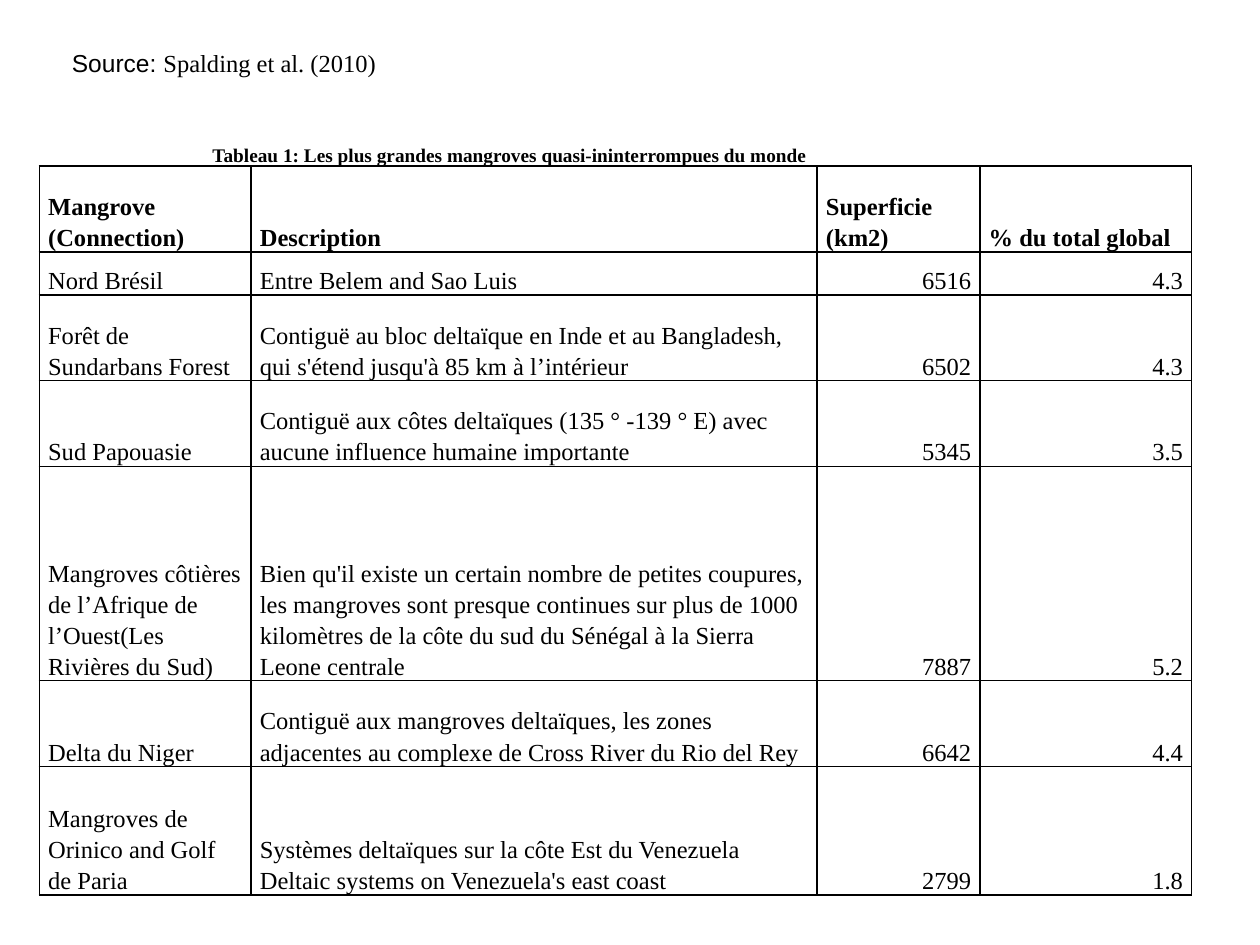
import pptx
import pptx.dml.color
import pptx.enum.text
import pptx.oxml
import pptx.oxml.ns
import pptx.util

Pt = pptx.util.Pt
ALIGN = pptx.enum.text.PP_ALIGN
ANCHOR = pptx.enum.text.MSO_ANCHOR
COLORS = {"ink": "000000"}
CAPTION = "Tableau 1: Les plus grandes mangroves quasi-ininterrompues du monde"
HEADERS = ["Mangrove (Connection)", "Description", "Superficie (km2)", "% du total global"]
MANGROVES = [
    ["Nord Brésil", "Entre Belem and Sao Luis", "6516", "4.3"],
    ["Forêt de Sundarbans Forest",
     "Contiguë au bloc deltaïque en Inde et au Bangladesh, qui s'étend jusqu'à 85 km à l’intérieur",
     "6502", "4.3"],
    ["Sud Papouasie",
     "Contiguë aux côtes deltaïques (135 ° -139 ° E) avec aucune influence humaine importante",
     "5345", "3.5"],
    ["Mangroves côtières de l’Afrique de l’Ouest(Les Rivières du Sud)",
     "Bien qu'il existe un certain nombre de petites coupures, les mangroves sont presque continues "
     "sur plus de 1000 kilomètres de la côte du sud du Sénégal à la Sierra Leone centrale",
     "7887", "5.2"],
    ["Delta du Niger",
     "Contiguë aux mangroves deltaïques, les zones adjacentes au complexe de Cross River du Rio del Rey",
     "6642", "4.4"],
    ["Mangroves de Orinico and Golf de Paria",
     "Systèmes deltaïques sur la côte Est du Venezuela\nDeltaic systems on Venezuela's east coast",
     "2799", "1.8"],
]
COLUMN_WIDTHS = [121, 323.5, 93, 121]
ROW_HEIGHTS = [33, 49, 24.5, 49, 49, 122.5, 49, 73.5]


def apply_format(target, values):
    for name, value in values.items():
        setattr(target, name, value)


class SlideBuilder:
    body_font = {"name": "Times New Roman", "size": Pt(14), "bold": False}
    header_font = {**body_font, "bold": True}
    caption_font = {**header_font, "size": Pt(11)}
    label_font = {**body_font, "name": "Arial"}
    cell_format = {"margin_left": Pt(5), "margin_right": Pt(5), "margin_top": 0,
                   "margin_bottom": 0, "vertical_anchor": ANCHOR.BOTTOM}
    border_width = Pt(1)

    def __init__(self, slide):
        self.slide = slide

    def add_run(self, paragraph, text, font):
        run = paragraph.add_run()
        run.text = text
        apply_format(run.font, font)
        run.font.color.rgb = pptx.dml.color.RGBColor.from_string(COLORS["ink"])

    def add_text(self, left, top, width, height, runs):
        frame = self.slide.shapes.add_textbox(Pt(left), Pt(top), Pt(width), Pt(height)).text_frame
        apply_format(frame, {"word_wrap": True, "vertical_anchor": ANCHOR.TOP, "margin_top": Pt(4.5)})
        for text, font in runs:
            self.add_run(frame.paragraphs[0], text, font)

    def add_table(self, left, top, widths, heights):
        table = self.slide.shapes.add_table(
            len(heights), len(widths), Pt(left), Pt(top), Pt(sum(widths)), Pt(sum(heights))).table
        apply_format(table, {"first_row": False, "horz_banding": False})
        for column, width in zip(table.columns, widths):
            column.width = Pt(width)
        for row, height in zip(table.rows, heights):
            row.height = Pt(height)
        return table

    def style_cell(self, cell, visible_sides):
        apply_format(cell, self.cell_format)
        properties = cell._tc.get_or_add_tcPr()
        for side in "LRTB":
            paint = "<a:noFill/>"
            if side in visible_sides:
                paint = f'<a:solidFill><a:srgbClr val="{COLORS["ink"]}"/></a:solidFill>'
            properties.append(pptx.oxml.parse_xml(
                f'<a:ln{side} {pptx.oxml.ns.nsdecls("a")} w="{self.border_width}">{paint}</a:ln{side}>'))
        cell.fill.background()

    def write_cell(self, cell, text, font, alignment):
        for index, line in enumerate(text.split("\n")):
            paragraph = cell.text_frame.add_paragraph() if index else cell.text_frame.paragraphs[0]
            apply_format(paragraph, {"alignment": alignment, "line_spacing": 1.15})
            self.add_run(paragraph, line, font)


def main():
    presentation = pptx.Presentation()
    apply_format(presentation, {"slide_width": Pt(720), "slide_height": Pt(540)})
    builder = SlideBuilder(presentation.slides.add_slide(presentation.slide_layouts[6]))

    table = builder.add_table(22.5, 62, COLUMN_WIDTHS, ROW_HEIGHTS)
    for row_index, row in enumerate(table.rows):
        for cell in row.cells:
            builder.style_cell(cell, "LRTB" if row_index else "B")
    table.cell(0, 0).merge(table.cell(0, 2))
    builder.write_cell(table.cell(0, 0), CAPTION, builder.caption_font, ALIGN.CENTER)

    for row_index, texts in enumerate([HEADERS] + MANGROVES, start=1):
        is_header = row_index == 1
        font = builder.header_font if is_header else builder.body_font
        for column_index, text in enumerate(texts):
            is_number = column_index >= 2 and not is_header
            alignment = ALIGN.RIGHT if is_number else ALIGN.LEFT
            builder.write_cell(table.cell(row_index, column_index), text, font, alignment)

    builder.add_text(34, 23, 253.5, 46, [
        ("Source: ", builder.label_font),
        ("Spalding et al. (2010)", builder.body_font),
    ])
    presentation.save("out.pptx")


if __name__ == "__main__":
    main()
